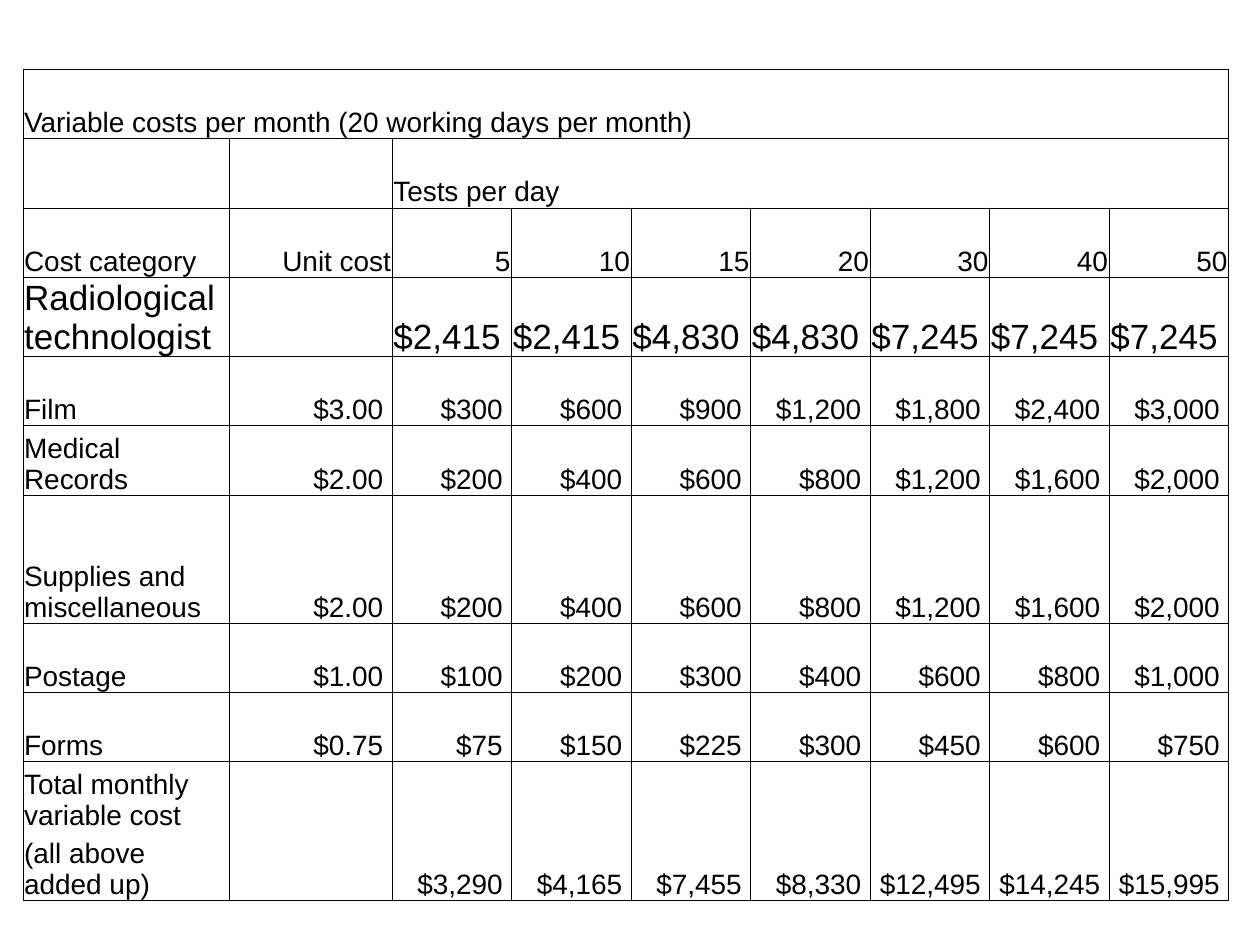
import pptx
import pptx.dml.color
import pptx.enum.text
import pptx.oxml
import pptx.oxml.ns
import pptx.util

Pt = pptx.util.Pt
ALIGN = pptx.enum.text.PP_ALIGN

HEADING = "Variable costs per month (20 working days per month)"
WORKING_DAYS = 20
TESTS_PER_DAY = [5, 10, 15, 20, 30, 40, 50]
TECHNOLOGIST = [2415, 2415, 4830, 4830, 7245, 7245, 7245]
UNIT_COSTS = [
    ("Film", 3),
    ("Medical Records", 2),
    ("Supplies and miscellaneous", 2),
    ("Postage", 1),
    ("Forms", 0.75),
]
TOTAL_LABELS = ["Total monthly variable cost ", "(all above added up)"]
LEFT, TOP = 13.1, 39.6
COLUMN_WIDTHS = [118.1, 92.9] + [68.3] * len(TESTS_PER_DAY)
ROW_HEIGHT, SUPPLIES_HEIGHT = 39.6, 73.2
SUPPLIES_ROW, TECHNOLOGIST_ROW = 6, 3
TEXT_SIZE, LARGE_SIZE = 16, 20
INK = "000000"


def color(hex_string):
    """Turn a hex string into a colour."""
    return pptx.dml.color.RGBColor.from_string(hex_string)


def dollars(amounts):
    """Format whole dollar amounts with the trailing space of accounting style."""
    return [f"${amount:,.0f} " for amount in amounts]


def cost_rows():
    """Work out every row of the table from the unit costs."""
    monthly = [[unit * WORKING_DAYS * tests for tests in TESTS_PER_DAY] for _, unit in UNIT_COSTS]
    totals = [sum(column) for column in zip(TECHNOLOGIST, *monthly)]
    rows = [
        [HEADING],
        ["", "", "Tests per day"],
        ["Cost category", "Unit cost"] + [str(tests) for tests in TESTS_PER_DAY],
        ["Radiological technologist", ""] + dollars(TECHNOLOGIST),
    ]
    for (category, unit), amounts in zip(UNIT_COSTS, monthly):
        rows.append([category, f"${unit:.2f} "] + dollars(amounts))
    rows.append([TOTAL_LABELS[0], ""] + dollars(totals))
    rows.append([TOTAL_LABELS[1]])
    return rows


def draw_borders(cell, open_side):
    """Give a cell thin borders, leaving one side open if named."""
    properties = cell._tc.get_or_add_tcPr()
    for side in "LRTB":
        paint = "<a:noFill/>" if side == open_side else (
            f'<a:solidFill><a:srgbClr val="{INK}"/></a:solidFill>')
        properties.append(pptx.oxml.parse_xml(
            f'<a:ln{side} {pptx.oxml.ns.nsdecls("a")} w="{Pt(0.5)}">{paint}</a:ln{side}>'))


def write(cell, text, size, align):
    """Put one run of text at the bottom of a cell."""
    cell.vertical_anchor = pptx.enum.text.MSO_ANCHOR.BOTTOM
    cell.margin_left = cell.margin_right = cell.margin_top = Pt(0.7)
    cell.margin_bottom = 0
    paragraph = cell.text_frame.paragraphs[0]
    paragraph.alignment = align
    run = paragraph.add_run()
    run.text = text
    run.font.name = "Arial"
    run.font.size = Pt(size)
    run.font.color.rgb = color(INK)


def main():
    """Build the slide with the table of variable costs."""
    deck = pptx.Presentation()
    deck.slide_width, deck.slide_height = Pt(720), Pt(540)
    slide = deck.slides.add_slide(deck.slide_layouts[6])

    rows = cost_rows()
    heights = [SUPPLIES_HEIGHT if r == SUPPLIES_ROW else ROW_HEIGHT for r in range(len(rows))]
    costs = slide.shapes.add_table(
        len(rows), len(COLUMN_WIDTHS), Pt(LEFT), Pt(TOP),
        Pt(sum(COLUMN_WIDTHS)), Pt(sum(heights))).table
    costs.first_row = costs.horz_banding = False
    for column, width in zip(costs.columns, COLUMN_WIDTHS):
        column.width = Pt(width)
    for row, height in zip(costs.rows, heights):
        row.height = Pt(height)

    last_row, last_column = len(rows) - 1, len(COLUMN_WIDTHS) - 1
    costs.cell(0, 0).merge(costs.cell(0, last_column))
    costs.cell(1, 2).merge(costs.cell(1, last_column))
    for c in range(1, last_column + 1):
        costs.cell(last_row - 1, c).merge(costs.cell(last_row, c))

    open_sides = {(last_row - 1, 0): "B", (last_row, 0): "T"}
    for r in range(len(rows)):
        for c in range(len(COLUMN_WIDTHS)):
            cell = costs.cell(r, c)
            draw_borders(cell, open_sides.get((r, c)))
            cell.fill.background()
            if c < len(rows[r]) and rows[r][c]:
                size = LARGE_SIZE if r == TECHNOLOGIST_ROW else TEXT_SIZE
                align = ALIGN.RIGHT if c > 0 and r > 1 else ALIGN.LEFT
                write(cell, rows[r][c], size, align)

    deck.save("out.pptx")


if __name__ == "__main__":
    main()
